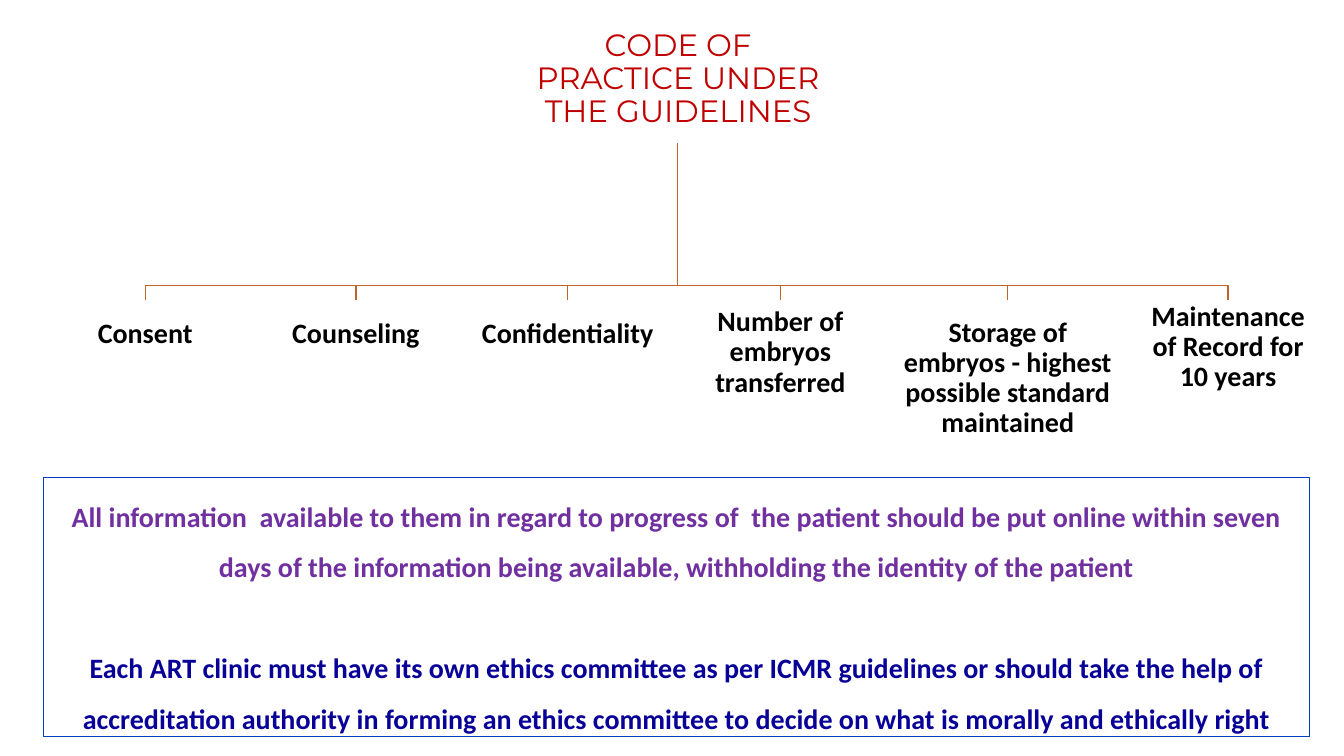
from pptx import Presentation
from pptx import util as u
from pptx.dml import color
from pptx.enum import shapes, text

TOPICS = [
    ("Consent", 0.53, 1.82, 0.68),
    ("Counseling", 2.62, 1.82, 0.68),
    ("Confidentiality", 4.72, 1.82, 0.68),
    ("Number of embryos transferred", 6.83, 1.82, 1.04),
    ("Storage of embryos - highest possible standard maintained", 8.94, 2.11, 1.55),
    ("Maintenance of Record for 10 years", 11.27, 1.82, 0.93),
]
ONLINE = ("All information  available to them in regard to progress of  the patient "
          "should be put online within seven days of the information being available, "
          "withholding the identity of the patient")
ETHICS = ("Each ART clinic must have its own ethics committee as per ICMR guidelines "
          "or should take the help of accreditation authority in forming an ethics "
          "committee to decide on what is morally and ethically right")
TRUNK_X, TRUNK_TOP, BAR_Y, TOPIC_TOP = 6.72, 1.42, 2.83, 2.98


def rgb(value):
    return color.RGBColor.from_string(value)


def write(para, words, *, size=20, font="Calibri", fill="000000", bold=True,
          spacing=0.9, before=0):
    para.alignment = text.PP_ALIGN.CENTER
    para.line_spacing = spacing
    para.space_before = u.Pt(before)
    span = para.add_run()
    span.text = words
    span.font.size = u.Pt(size)
    span.font.name = font
    span.font.bold = bold
    span.font.color.rgb = rgb(fill)


def set_frame(shape, anchor, across, down):
    frame = shape.text_frame
    frame.word_wrap = True
    frame.auto_size = text.MSO_AUTO_SIZE.NONE
    frame.vertical_anchor = anchor
    frame.margin_left = frame.margin_right = u.Inches(across)
    frame.margin_top = frame.margin_bottom = u.Inches(down)
    return frame


def add_title(page, words):
    title = page.shapes.title
    title.left, title.top = u.Inches(5.17), u.Inches(0.16)
    title.width, title.height = u.Inches(3.11), u.Inches(1.26)
    frame = set_frame(title, text.MSO_ANCHOR.MIDDLE, 0.02, 0.02)
    write(frame.paragraphs[0], words, size=22, font="Montserrat",
          fill="C00000", bold=False)


def add_box(page, left, top, width, height):
    box = page.shapes.add_shape(
        shapes.MSO_SHAPE.RECTANGLE, u.Inches(left), u.Inches(top),
        u.Inches(width), u.Inches(height))
    box.shadow.inherit = False
    return box


def add_branch(page, end_x):
    points = [(TRUNK_X, TRUNK_TOP), (TRUNK_X, BAR_Y), (end_x, BAR_Y), (end_x, TOPIC_TOP)]
    corners = [(u.Inches(x), u.Inches(y)) for x, y in points]
    builder = page.shapes.build_freeform(*corners[0])
    builder.add_line_segments(corners[1:], close=False)
    branch = builder.convert_to_shape()
    branch.shadow.inherit = False
    branch.fill.background()
    branch.line.color.rgb = rgb("BE6427")
    branch.line.width = u.Pt(1)


def add_topic(page, words, left, width, height):
    box = add_box(page, left, TOPIC_TOP, width, height)
    box.fill.solid()
    box.fill.fore_color.rgb = rgb("FFFFFF")
    box.line.fill.background()
    frame = set_frame(box, text.MSO_ANCHOR.MIDDLE, 0.01, 0.01)
    write(frame.paragraphs[0], words)


def add_rules(page):
    box = add_box(page, 0.43, 4.74, 12.56, 2.57)
    box.fill.background()
    box.line.color.rgb = rgb("003FBF")
    box.line.width = u.Pt(0.75)
    frame = set_frame(box, text.MSO_ANCHOR.TOP, 0.1, 0.05)
    write(frame.paragraphs[0], ONLINE, fill="7030A0", spacing=1.5)
    write(frame.add_paragraph(), ETHICS, fill="080198", spacing=1.5, before=36)


def main():
    deck = Presentation()
    deck.slide_width, deck.slide_height = u.Inches(13.33), u.Inches(7.5)
    page = deck.slides.add_slide(deck.slide_layouts[5])
    add_title(page, "CODE OF PRACTICE UNDER THE GUIDELINES")
    for words, left, width, height in TOPICS:
        add_branch(page, left + width / 2)
    for words, left, width, height in TOPICS:
        add_topic(page, words, left, width, height)
    add_rules(page)
    deck.save("out.pptx")


if __name__ == "__main__":
    main()
